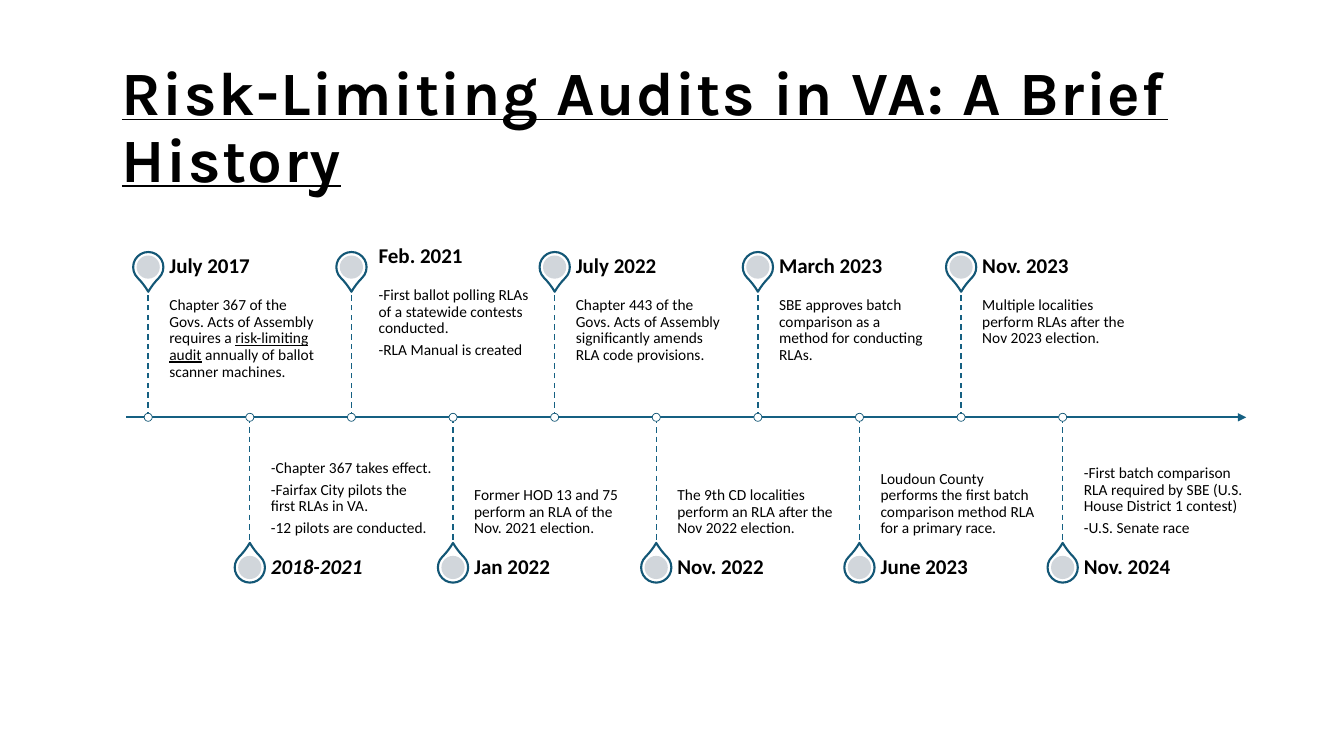
"""Build a timeline slide on the history of risk-limiting audits in Virginia."""
from lxml import etree
from pptx import Presentation
from pptx.dml.color import RGBColor
from pptx.enum.dml import MSO_LINE
from pptx.enum.shapes import MSO_CONNECTOR, MSO_SHAPE
from pptx.enum.text import MSO_ANCHOR, MSO_AUTO_SIZE, PP_ALIGN
from pptx.oxml.ns import qn
from pptx.util import Inches, Pt

TOP, MID, LOW = MSO_ANCHOR.TOP, MSO_ANCHOR.MIDDLE, MSO_ANCHOR.BOTTOM
LEFT, FIXED = PP_ALIGN.LEFT, MSO_AUTO_SIZE.NONE
OVAL, DROP = MSO_SHAPE.OVAL, MSO_SHAPE.TEAR
STRAIGHT, DASH = MSO_CONNECTOR.STRAIGHT, MSO_LINE.DASH

THEME = {
    "ink": RGBColor.from_string("000000"), "paper": RGBColor.from_string("FFFFFF"),
    "axis": RGBColor.from_string("156082"), "edge": RGBColor.from_string("135776"),
    "core": RGBColor.from_string("CCD2D8"),
    "head": 44, "date": 15, "body": 11, "title font": "Karla", "text font": "Calibri",
}

EVENTS = [
    ("July 2017", [[("Chapter 367 of the Govs. Acts of Assembly requires a ", {}),
                    ("risk-limiting audit", {"underline": True}),
                    (" annually of ballot scanner machines.", {})]]),
    ("2018-2021", [[("-", {"italic": True}), ("Chapter 367 takes effect.", {})],
                   "-Fairfax City pilots the first RLAs in VA.",
                   "-12 pilots are conducted."]),
    ("Feb. 2021", ["-First ballot polling RLAs of a statewide contests conducted.",
                   "-RLA Manual is created"]),
    ("Jan 2022", ["Former HOD 13 and 75 perform an RLA of the Nov. 2021 election."]),
    ("July 2022", ["Chapter 443 of the Govs. Acts of Assembly significantly amends "
                   "RLA code provisions."]),
    ("Nov. 2022", ["The 9th CD localities perform an RLA after the Nov 2022 election."]),
    ("March 2023", ["SBE approves batch comparison as a method for conducting RLAs."]),
    ("June 2023", ["Loudoun County performs the first batch comparison method RLA "
                   "for a primary race."]),
    ("Nov. 2023", ["Multiple localities perform RLAs after the Nov 2023 election."]),
    ("Nov. 2024", ["-First batch comparison RLA required by SBE (U.S. House District 1 "
                   "contest)", "-U.S. Senate race"]),
]


def write(box, paras, size="body", face="text font", anchor=MID, inset=None, after=0, **style):
    frame = box.text_frame
    frame.word_wrap, frame.auto_size, frame.vertical_anchor = True, FIXED, anchor
    if inset:
        (frame.margin_left, frame.margin_top,
         frame.margin_right, frame.margin_bottom) = map(Inches, inset)
    for n, para in enumerate(paras):
        line = frame.add_paragraph() if n else frame.paragraphs[0]
        line.alignment, line.line_spacing, line.space_after = LEFT, 0.9, Pt(after)
        for words, extra in [(para, {})] if isinstance(para, str) else para:
            run = line.add_run()
            run.text = words
            run.font.name, run.font.size = THEME[face], Pt(THEME[size])
            run.font.color.rgb = THEME["ink"]
            for key, value in {**style, **extra}.items():
                setattr(run.font, key, value)


def draw(kind, x, y, size, fill, width=0):
    mark = art.add_shape(kind, Inches(x - size / 2), Inches(y - size / 2),
                         Inches(size), Inches(size))
    mark.shadow.inherit = False
    mark.fill.solid()
    mark.fill.fore_color.rgb = THEME[fill]
    if width:
        mark.line.color.rgb, mark.line.width = THEME["edge"], Pt(width)
    else:
        mark.line.fill.background()
    return mark


deck = Presentation()
deck.slide_width, deck.slide_height = Inches(13.33), Inches(7.5)
slide = deck.slides.add_slide(deck.slide_layouts[5])

title = slide.shapes.title
title.left, title.top, title.width, title.height = map(Inches, (1.11, 0.74, 11.11, 1.08))
write(title, ["Risk-Limiting Audits in VA: A Brief History"], size="head",
      face="title font", bold=True, underline=True)
title.text_frame.paragraphs[0].runs[0].font._element.set("spc", "100")

art = slide.shapes.add_group_shape().shapes
axis = 4.14
first, last = 1.47, 10.54
step = (last - first) / (len(EVENTS) - 1)
reach = 1.27
wide, tall = 1.6, 0.45

lines = [(1.25, axis, 12.36, axis, 1.5)]
for n in range(len(EVENTS)):
    x = first + n * step
    lines.append((x, axis, x, axis + (reach if n % 2 else -reach), 1))
for n, (*ends, width) in enumerate(lines):
    rule = art.add_connector(STRAIGHT, *map(Inches, ends))
    rule.line.color.rgb, rule.line.width = THEME["axis"], Pt(width)
    if n:
        rule.line.dash_style = DASH
    props = rule._element.spPr
    if not n:
        etree.SubElement(props.find(qn("a:ln")), qn("a:tailEnd"), type="triangle")
    etree.SubElement(props, qn("a:effectLst"))

for n, (date, notes) in enumerate(EVENTS):
    x, below = first + n * step, n % 2
    y = axis + (1.49 if below else -1.49)
    pin = draw(DROP, x, y, 0.3, "paper", 1.5)
    pin.adjustments[0], pin.rotation = 1.15, 315 if below else 135
    core = draw(OVAL, x, y, 0.23, "core")
    tint = core._element.spPr.find(qn("a:solidFill"))[0]
    etree.SubElement(tint, qn("a:alpha"), val="90000")
    draw(OVAL, x, axis, 0.08, "paper", 0.5)

    dx, dy = (0.27, -0.1) if date == "Feb. 2021" else (0.21, 0)
    note_y = axis if below else axis - reach + dy
    date_y = axis + reach if below else note_y - tall
    note = art.add_textbox(*map(Inches, (x + dx, note_y, wide, reach)))
    write(note, notes, anchor=LOW if below else TOP, after=3.85,
          inset=(0, 0.11, 0, 0.08) if below else (0, 0.08, 0.08, 0.11))
    label = art.add_textbox(*map(Inches, (x + dx, date_y, wide, tall)))
    write(label, [date], size="date", inset=(0, 0, 0.1, 0), bold=True,
          italic=date == "2018-2021")

deck.save("out.pptx")
